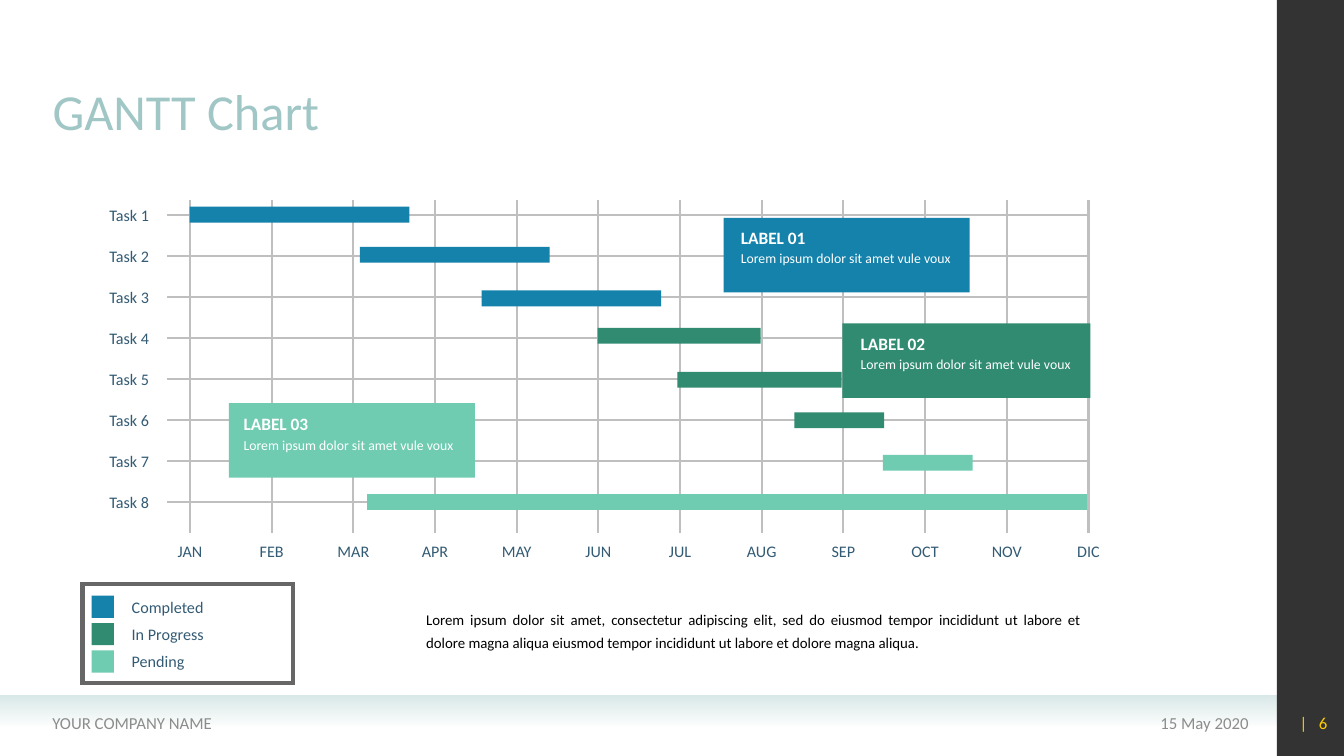
"""Build a Gantt chart slide with task bars, callout cards and a status legend."""
from dataclasses import dataclass

from lxml import etree
from pptx import Presentation
from pptx.dml.color import RGBColor
from pptx.enum.shapes import MSO_CONNECTOR, MSO_SHAPE
from pptx.enum.text import MSO_ANCHOR, MSO_AUTO_SIZE, PP_ALIGN
from pptx.oxml.ns import qn
from pptx.util import Cm, Pt

RECTANGLE = MSO_SHAPE.RECTANGLE
STRAIGHT = MSO_CONNECTOR.STRAIGHT
TOP, MIDDLE, BOTTOM = MSO_ANCHOR.TOP, MSO_ANCHOR.MIDDLE, MSO_ANCHOR.BOTTOM
LEFT, CENTER = PP_ALIGN.LEFT, PP_ALIGN.CENTER
RIGHT, JUSTIFY = PP_ALIGN.RIGHT, PP_ALIGN.JUSTIFY
FIXED, GROW = MSO_AUTO_SIZE.NONE, MSO_AUTO_SIZE.SHAPE_TO_FIT_TEXT

COMPLETED, IN_PROGRESS, PENDING = "1482AB", "318B71", "70CCB1"
WHITE, BLACK, MIST, SEA = "FFFFFF", "000000", "D9E9E8", "A0C7C5"
SLATE, GRID, FRAME, FOOTER, GOLD = "335B74", "BFBFBF", "666666", "8C8C8C", "FFCC00"

GRID_LEFT, GRID_RIGHT, GRID_TOP, GRID_BOTTOM = 4.22, 27.43, 5.03, 13.44
FIRST_MONTH, FIRST_ROW, LAST_ROW = 4.79, 5.41, 12.65
LABEL_HEIGHT, BAR_HEIGHT, CARD_HEIGHT = 0.74, 0.4, 1.88
MONTH_WIDTH = 1.8
MONTHS = "JAN FEB MAR APR MAY JUN JUL AUG SEP OCT NOV DIC".split()
LEGEND = {"Completed": COMPLETED, "In Progress": IN_PROGRESS, "Pending": PENDING}
CARD_TEXT = "Lorem ipsum dolor sit amet vule voux"
DESCRIPTION = (
    "Lorem ipsum dolor sit amet, consectetur adipiscing elit, sed do eiusmod tempor "
    "incididunt ut labore et dolore magna aliqua eiusmod tempor incididunt ut labore "
    "et dolore magna aliqua."
)


@dataclass(frozen=True)
class Task:
    left: float
    top: float
    width: float
    status: str


@dataclass(frozen=True)
class Card:
    heading: str
    left: float
    top: float
    width: float
    text_left: float
    text_top: float
    status: str


@dataclass(frozen=True)
class TextStyle:
    size: float
    color: str
    align: PP_ALIGN = LEFT
    anchor: MSO_ANCHOR = MIDDLE
    bold: bool = False
    wrap: bool = True
    fit: MSO_AUTO_SIZE = FIXED
    line_spacing: object = None
    space_before: object = None


TASKS = (
    Task(4.78, 5.21, 5.54, COMPLETED),
    Task(9.07, 6.22, 4.78, COMPLETED),
    Task(12.14, 7.32, 4.52, COMPLETED),
    Task(15.06, 8.26, 4.11, IN_PROGRESS),
    Task(17.07, 9.37, 4.14, IN_PROGRESS),
    Task(20.02, 10.39, 2.26, IN_PROGRESS),
    Task(22.25, 11.46, 2.26, PENDING),
    Task(9.25, 12.45, 18.14, PENDING),
)
CARDS = (
    Card("LABEL 01", 18.24, 5.49, 6.2, 18.42, 5.59, COMPLETED),
    Card("LABEL 02", 21.23, 8.15, 6.25, 21.44, 8.26, IN_PROGRESS),
    Card("LABEL 03", 5.77, 10.16, 6.2, 5.89, 10.29, PENDING),
)
ROW_STEP = (LAST_ROW - FIRST_ROW) / (len(TASKS) - 1)
MONTH_STEP = (GRID_RIGHT - FIRST_MONTH) / (len(MONTHS) - 1)

TITLE = TextStyle(36, SEA, anchor=BOTTOM, line_spacing=0.9)
TASK_LABEL = TextStyle(11.5, SLATE, RIGHT, wrap=False, fit=GROW)
MONTH_LABEL = TextStyle(11.5, SLATE, CENTER, wrap=False, fit=GROW)
LEGEND_LABEL = TextStyle(11.5, SLATE, wrap=False, fit=GROW)
CARD_HEADING = TextStyle(12.4, WHITE, bold=True, wrap=False, fit=GROW)
CARD_BODY = TextStyle(9.8, WHITE, anchor=TOP, fit=GROW, space_before=Pt(2))
BODY = TextStyle(10.6, BLACK, JUSTIFY, TOP, fit=GROW,
                 line_spacing=Pt(15.9), space_before=Pt(2))
COMPANY = TextStyle(12, FOOTER)
DATE = TextStyle(12, FOOTER, RIGHT)
PAGE = TextStyle(12, GOLD, RIGHT)


def rgb(color: str) -> RGBColor:
    return RGBColor.from_string(color)


def apply_format(target, values: dict) -> None:
    for name, value in values.items():
        setattr(target, name, value)


def write(shape, text: str, style: TextStyle) -> None:
    frame = shape.text_frame
    frame.text = text
    paragraph = frame.paragraphs[0]
    font = paragraph.runs[0].font
    apply_format(frame, {"word_wrap": style.wrap, "auto_size": style.fit,
                         "vertical_anchor": style.anchor})
    apply_format(paragraph, {"alignment": style.align,
                             "line_spacing": style.line_spacing,
                             "space_before": style.space_before})
    apply_format(font, {"name": "Calibri", "size": Pt(style.size), "bold": style.bold})
    font.color.rgb = rgb(style.color)


def add_text(slide, text: str, left: float, top: float, width: float,
             height: float, style: TextStyle) -> None:
    box = slide.shapes.add_textbox(Cm(left), Cm(top), Cm(width), Cm(height))
    write(box, text, style)


def add_block(slide, left: float, top: float, width: float, height: float, color: str):
    block = slide.shapes.add_shape(RECTANGLE, Cm(left), Cm(top), Cm(width), Cm(height))
    block.shadow.inherit = False
    block.fill.solid()
    block.fill.fore_color.rgb = rgb(color)
    block.line.fill.background()
    return block


def add_grid_line(slide, x1: float, y1: float, x2: float, y2: float) -> None:
    line = slide.shapes.add_connector(STRAIGHT, Cm(x1), Cm(y1), Cm(x2), Cm(y2))
    line.line.color.rgb = rgb(GRID)
    line.line.width = Pt(1.5)
    etree.SubElement(line.element.spPr, qn("a:effectLst"))


def set_opacity(shape, percents: tuple[int, ...]) -> None:
    for color, percent in zip(shape.element.spPr.iter(qn("a:srgbClr")), percents):
        etree.SubElement(color, qn("a:alpha"), val=str(percent * 1000))


def draw_page_frame(slide) -> None:
    footer_band = add_block(slide, 0, 17.52, 32.18, 0.8, MIST)
    footer_band.fill.gradient()
    footer_band.fill.gradient_angle = 270
    for stop in footer_band.fill.gradient_stops:
        stop.color.rgb = rgb(MIST)
    set_opacity(footer_band, (100, 0))
    set_opacity(add_block(slide, 32.18, 0, 1.69, 19.05, BLACK), (80,))
    add_text(slide, "15 May 2020", 23.11, 17.7, 8.61, 1.02, DATE)
    add_text(slide, "YOUR COMPANY NAME", 1.07, 17.7, 12.45, 1.02, COMPANY)
    add_text(slide, "|", 32.16, 17.7, 1.04, 1.02, PAGE)
    add_text(slide, "6", 32.5, 17.7, 1.2, 1.02, PAGE)


def draw_title(slide) -> None:
    title = slide.shapes.title
    apply_format(title, {"left": Cm(1.07), "top": Cm(0.51),
                         "width": Cm(28.47), "height": Cm(3.18)})
    write(title, "GANTT Chart", TITLE)


def draw_grid(slide) -> None:
    for row in range(len(TASKS)):
        y = FIRST_ROW + row * ROW_STEP
        add_grid_line(slide, GRID_LEFT, y, GRID_RIGHT, y)
        add_text(slide, f"Task {row + 1}", 2.36, y - LABEL_HEIGHT / 2, 1.65,
                 LABEL_HEIGHT, TASK_LABEL)
    for column, month in enumerate(MONTHS):
        x = FIRST_MONTH + column * MONTH_STEP
        add_grid_line(slide, x, GRID_TOP, x, GRID_BOTTOM)
        add_text(slide, month, x - MONTH_WIDTH / 2, 13.51, MONTH_WIDTH,
                 LABEL_HEIGHT, MONTH_LABEL)


def draw_schedule(slide) -> None:
    for task in TASKS:
        add_block(slide, task.left, task.top, task.width, BAR_HEIGHT, task.status)
    for card in CARDS:
        add_block(slide, card.left, card.top, card.width, CARD_HEIGHT, card.status)
        add_text(slide, card.heading, card.text_left, card.text_top, 2.4, 0.79, CARD_HEADING)
        add_text(slide, CARD_TEXT, card.text_left, card.text_top + 0.59, 5.89, 1.09, CARD_BODY)


def draw_legend(slide) -> None:
    frame = add_block(slide, 2.08, 14.71, 5.31, 2.51, WHITE)
    frame.line.color.rgb = rgb(FRAME)
    frame.line.width = Pt(3)
    etree.SubElement(frame.element.spPr.find(qn("a:ln")), qn("a:miter"), lim="800000")
    for index, (status, color) in enumerate(LEGEND.items()):
        top = 15.01 + index * 0.69
        add_block(slide, 2.31, top, 0.56, 0.56, color)
        add_text(slide, status, 3.07, top - 0.09, 2.6, LABEL_HEIGHT, LEGEND_LABEL)


def main() -> None:
    deck = Presentation()
    apply_format(deck, {"slide_width": Cm(33.87), "slide_height": Cm(19.05)})
    slide = deck.slides.add_slide(deck.slide_layouts[5])
    draw_page_frame(slide)
    draw_title(slide)
    draw_grid(slide)
    draw_schedule(slide)
    add_text(slide, DESCRIPTION, 10.49, 15.16, 16.99, 1.35, BODY)
    draw_legend(slide)
    deck.save("out.pptx")


if __name__ == "__main__":
    main()
